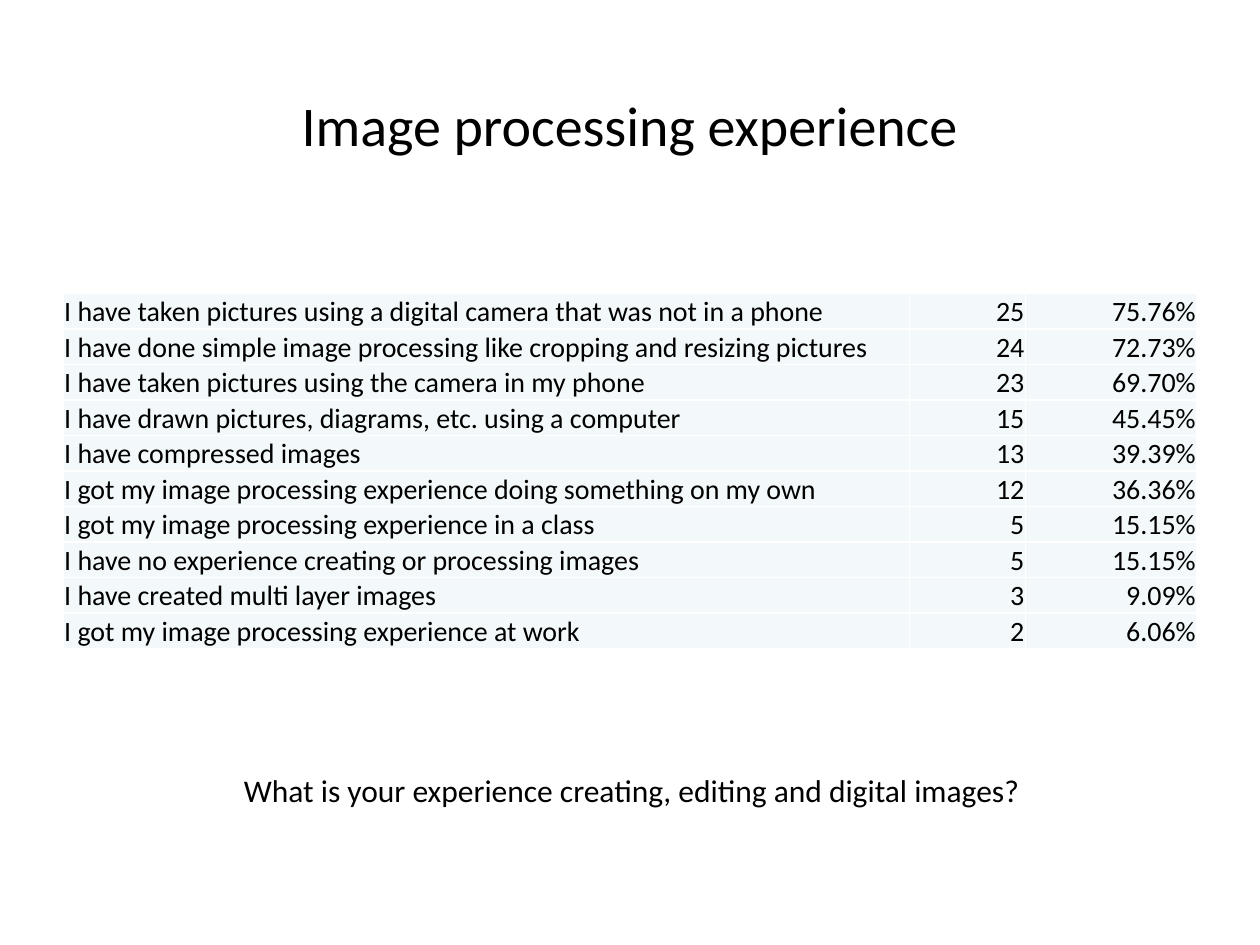
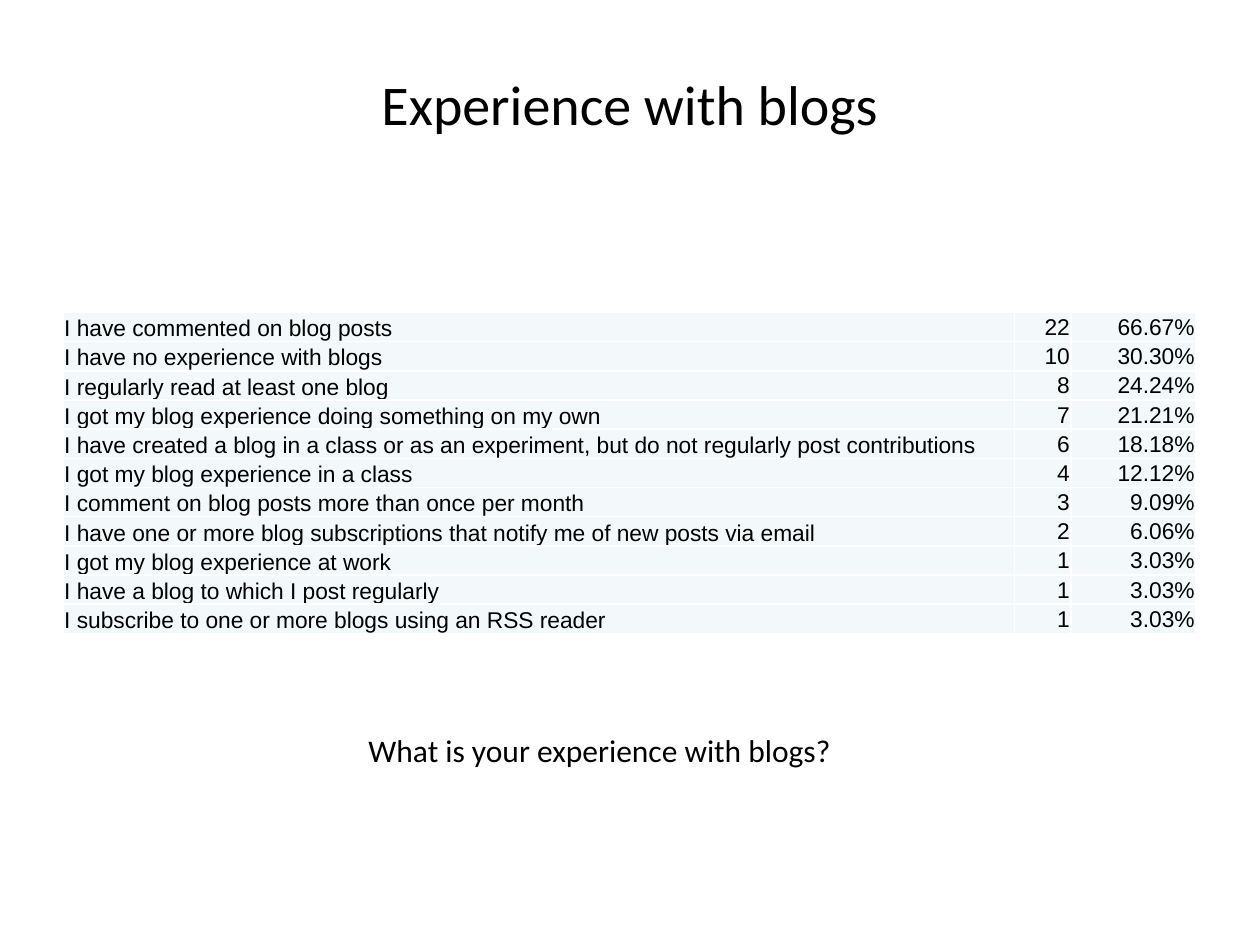
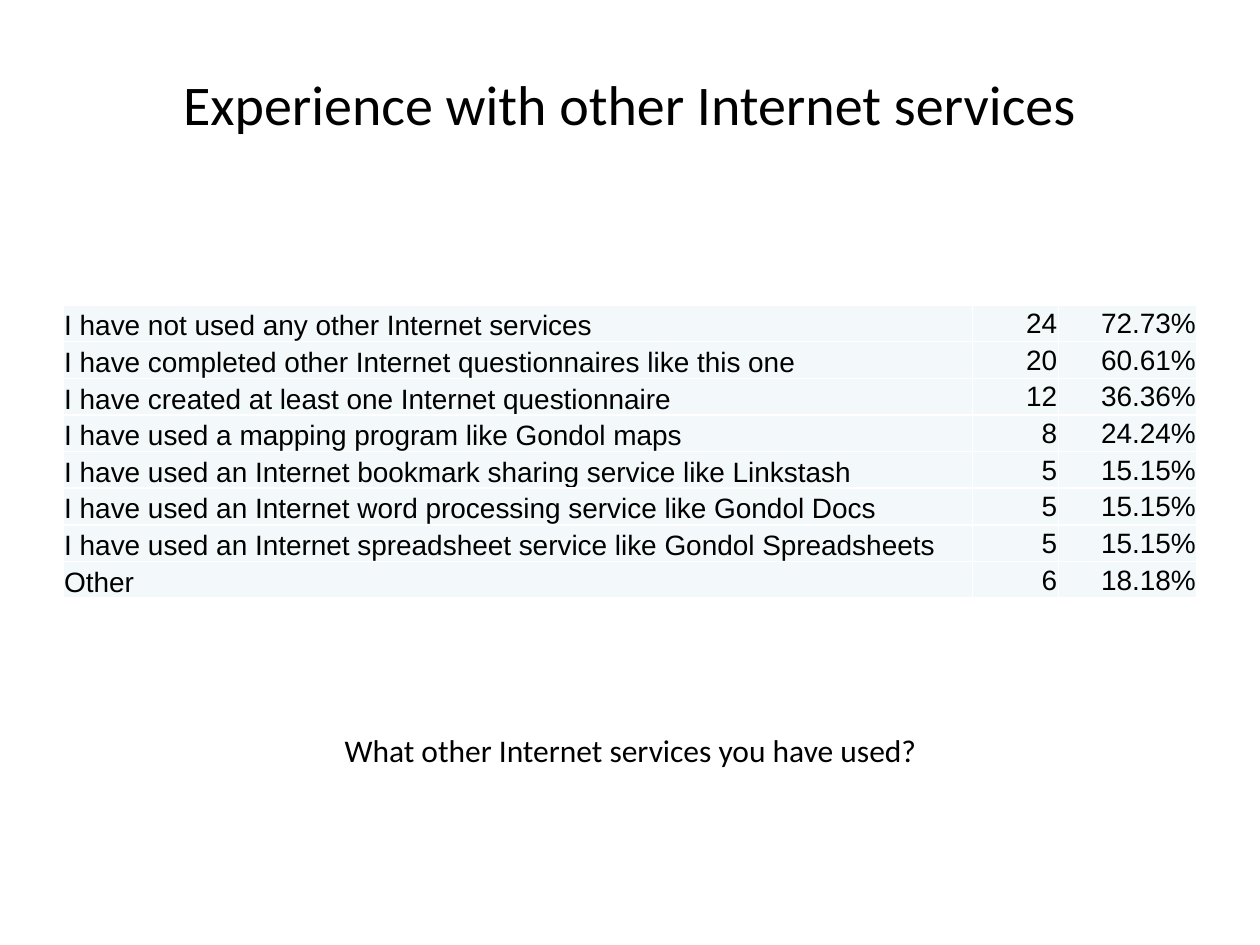
from dataclasses import dataclass
from typing import Any

from lxml import etree
from pptx import Presentation
from pptx.dml.color import RGBColor
from pptx.enum.text import MSO_ANCHOR, MSO_AUTO_SIZE, PP_ALIGN
from pptx.oxml.ns import qn
from pptx.util import Emu, Pt

LEFT, CENTER, RIGHT = PP_ALIGN.LEFT, PP_ALIGN.CENTER, PP_ALIGN.RIGHT
BOTTOM, MIDDLE = MSO_ANCHOR.BOTTOM, MSO_ANCHOR.MIDDLE
GROW = MSO_AUTO_SIZE.SHAPE_TO_FIT_TEXT
SCALE = 9144
VOTERS = 33


@dataclass(frozen=True)
class Theme:
    ink: str = "000000"
    tint: str = "F3F9FA"
    rule: str = "FFFFFF"
    face: str = "Calibri"
    plain: str = "Arial"
    title: int = 32
    note: int = 18
    large: int = 16
    small: int = 13


@dataclass(frozen=True)
class Box:
    left: int
    top: int
    width: int
    height: int


@dataclass(frozen=True)
class Label:
    text: str
    box: Box
    size: int
    wrap: bool = False


@dataclass(frozen=True)
class Grid:
    top: int
    height: int
    cols: tuple[int, ...]
    face: str
    size: int
    rows: tuple[tuple[str, int], ...]


@dataclass(frozen=True)
class Survey:
    title: Label
    grid: Grid
    note: Label


THEME = Theme()

SURVEYS = (
    Survey(
        Label("Image processing experience", Box(227, 67, 546, 64), THEME.title),
        Grid(233, 276, (672, 92, 136), THEME.face, THEME.large, (
            ("I have taken pictures using a digital camera that was not in a phone", 25),
            ("I have done simple image processing like cropping and resizing pictures", 24),
            ("I have taken pictures using the camera in my phone", 23),
            ("I have drawn pictures, diagrams, etc. using a computer", 15),
            ("I have compressed images", 13),
            ("I got my image processing experience doing something on my own", 12),
            ("I got my image processing experience in a class", 5),
            ("I have no experience creating or processing images", 5),
            ("I have created multi layer images", 3),
            ("I got my image processing experience at work", 2),
        )),
        Label("What is your experience creating, editing and digital images?",
              Box(164, 607, 675, 40), THEME.note, True),
    ),
    Survey(
        Label("Experience with blogs", Box(291, 50, 418, 64), THEME.title),
        Grid(248, 255, (755, 45, 99), THEME.plain, THEME.small, (
            ("I have commented on blog posts", 22),
            ("I have no experience with blogs", 10),
            ("I regularly read at least one blog", 8),
            ("I got my blog experience doing something on my own", 7),
            ("I have created a blog in a class or as an experiment, "
             "but do not regularly post contributions", 6),
            ("I got my blog experience in a class", 4),
            ("I comment on blog posts more than once per month", 3),
            ("I have one or more blog subscriptions that notify me of new posts via email", 2),
            ("I got my blog experience at work", 1),
            ("I have a blog to which I post regularly", 1),
            ("I subscribe to one or more blogs using an RSS reader", 1),
        )),
        Label("What is your experience with blogs?", Box(280, 575, 392, 40), THEME.note),
    ),
    Survey(
        Label("Experience with other Internet services", Box(132, 50, 736, 64), THEME.title),
        Grid(242, 233, (722, 68, 110), THEME.plain, THEME.large, (
            ("I have not used any other Internet services", 24),
            ("I have completed other Internet questionnaires like this one", 20),
            ("I have created at least one Internet questionnaire", 12),
            ("I have used a mapping program like Gondol maps", 8),
            ("I have used an Internet bookmark sharing service like Linkstash", 5),
            ("I have used an Internet word processing service like Gondol Docs", 5),
            ("I have used an Internet spreadsheet service like Gondol Spreadsheets", 5),
            ("Other", 6),
        )),
        Label("What other Internet services you have used?",
              Box(198, 575, 605, 40), THEME.note, True),
    ),
)


def px(count: int) -> Emu:
    return Emu(count * SCALE)


def apply(item: Any, style: dict[str, Any]) -> None:
    for name, value in style.items():
        setattr(item, name, value)


def place(box: Box) -> tuple[Emu, ...]:
    return tuple(px(side) for side in (box.left, box.top, box.width, box.height))


def write(frame: Any, text: str, face: str, size: int, align: Any) -> None:
    line = frame.paragraphs[0]
    line.alignment = align
    run = line.add_run()
    run.text = text
    apply(run.font, {"name": face, "size": Pt(size), "bold": False})
    run.font.color.rgb = RGBColor.from_string(THEME.ink)


def draw_label(slide: Any, label: Label) -> None:
    frame = slide.shapes.add_textbox(*place(label.box)).text_frame
    apply(frame, {"word_wrap": label.wrap, "auto_size": GROW})
    write(frame, label.text, THEME.face, label.size, CENTER)


def draw_edges(cell: Any) -> None:
    props = cell._tc.get_or_add_tcPr()
    for side in ("lnL", "lnR", "lnT", "lnB"):
        edge = etree.SubElement(props, qn(f"a:{side}"), w=str(Pt(1)))
        fill = etree.SubElement(edge, qn("a:solidFill"))
        etree.SubElement(fill, qn("a:srgbClr"), val=THEME.rule)


def draw_cell(cell: Any, text: str, grid: Grid, first: bool) -> None:
    apply(cell, {
        "margin_left": px(1),
        "margin_right": px(1),
        "margin_top": px(1),
        "margin_bottom": px(0),
        "vertical_anchor": BOTTOM if first else MIDDLE,
    })
    draw_edges(cell)
    cell.fill.solid()
    cell.fill.fore_color.rgb = RGBColor.from_string(THEME.tint)
    write(cell.text_frame, text, grid.face, grid.size, LEFT if first else RIGHT)


def draw_grid(slide: Any, grid: Grid) -> None:
    box = Box(50, grid.top, sum(grid.cols), grid.height)
    table = slide.shapes.add_table(len(grid.rows), len(grid.cols), *place(box)).table
    apply(table, {"first_row": False, "horz_banding": False})
    for col, width in zip(table.columns, grid.cols):
        col.width = px(width)
    for row, (text, count) in zip(table.rows, grid.rows):
        row.height = Emu(px(grid.height) // len(grid.rows))
        values = (text, str(count), f"{count / VOTERS:.2%}")
        for place_no, (cell, value) in enumerate(zip(row.cells, values)):
            draw_cell(cell, value, grid, place_no == 0)


def main() -> None:
    deck = Presentation()
    apply(deck, {"slide_width": px(1000), "slide_height": px(750)})
    for survey in SURVEYS:
        slide = deck.slides.add_slide(deck.slide_layouts[6])
        draw_grid(slide, survey.grid)
        draw_label(slide, survey.title)
        draw_label(slide, survey.note)
    deck.save("out.pptx")


if __name__ == "__main__":
    main()
